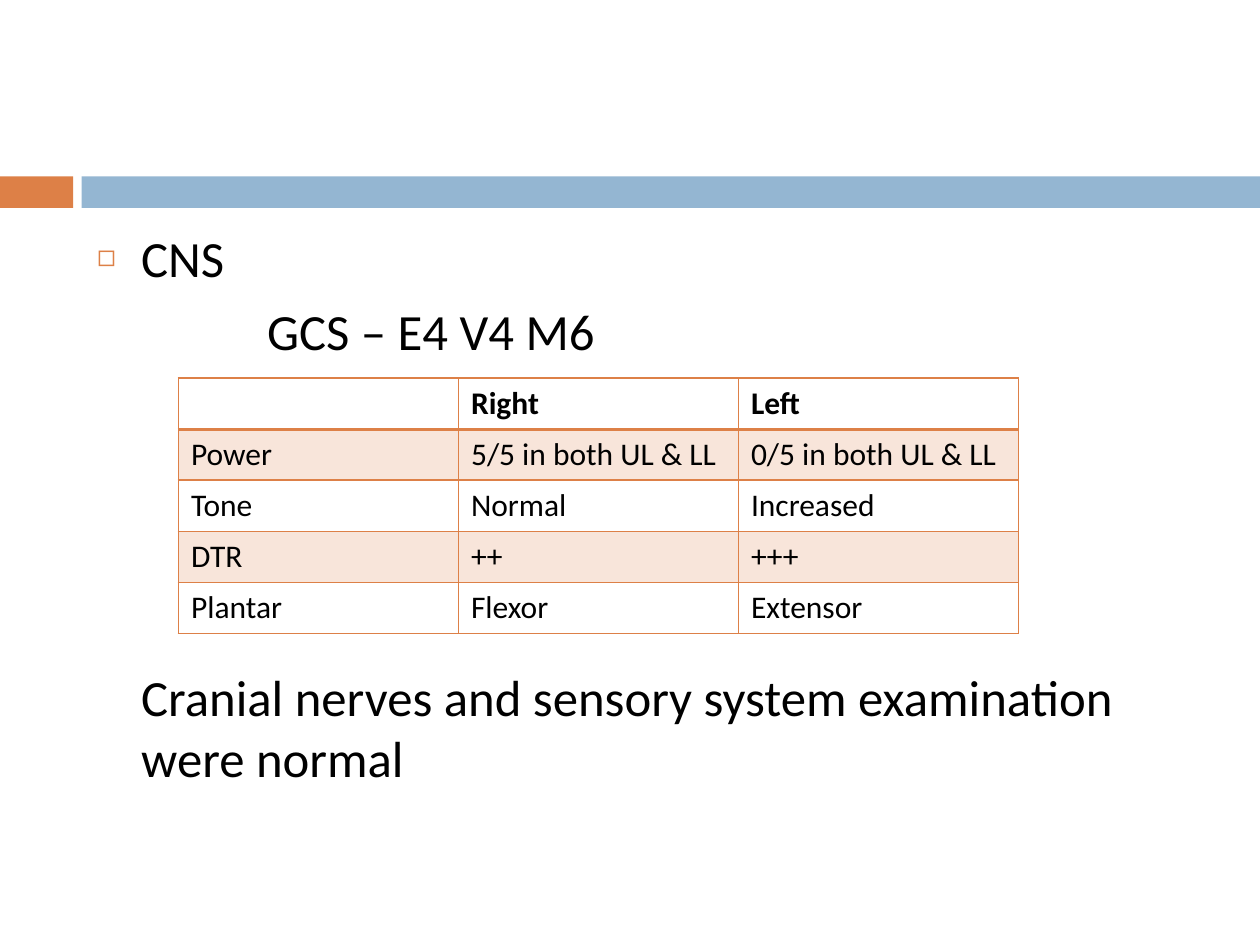
"""Build the nervous system examination slide."""

from dataclasses import dataclass

from lxml.etree import SubElement
from pptx import Presentation
from pptx.dml.color import RGBColor as Rgb
from pptx.enum.shapes import MSO_SHAPE as Shape
from pptx.enum.text import MSO_ANCHOR as Anchor, MSO_AUTO_SIZE as AutoSize
from pptx.oxml.ns import qn
from pptx.util import Pt

COLORS = {"accent": "DD8047", "band": "94B6D2", "text": "000000"}
FONT = "Calibri"
ROWS = [
    ["", "Right", "Left"],
    ["Power", "5/5 in both UL & LL", "0/5 in both UL & LL"],
    ["Tone", "Normal", "Increased"],
    ["DTR", "++", "+++"],
    ["Plantar", "Flexor", "Extensor"],
]


@dataclass
class Bar:
    left: float
    width: float
    color: str


@dataclass
class Line:
    text: str
    margin: float
    indent: float = 0
    before: float = 7
    bullet: str = ""


BARS = [Bar(0, 41.9, "accent"), Bar(46.6, 673.4, "band")]
LINES = [
    Line("CNS", 25.2, indent=-25.2, bullet="◻"),
    Line("GCS – E4 V4 M6", 97.2),
    Line("Cranial nerves and sensory system examination were normal", 25.2, before=174),
]


def add_bar(slide, bar: Bar) -> None:
    """Draw one solid part of the header band."""
    box = slide.shapes.add_shape(
        Shape.RECTANGLE, Pt(bar.left), Pt(100.8), Pt(bar.width), Pt(18)
    )
    box.shadow.inherit = False
    box.fill.solid()
    box.fill.fore_color.rgb = Rgb.from_string(COLORS[bar.color])
    box.line.fill.background()


def write_text(para, text: str, size: float, bold: bool = False) -> None:
    """Add a formatted span to a paragraph."""
    span = para.add_run()
    span.text = text
    for name, value in {"name": FONT, "size": Pt(size), "bold": bold}.items():
        setattr(span.font, name, value)
    span.font.color.rgb = Rgb.from_string(COLORS["text"])


def add_line(para, line: Line) -> None:
    """Write a body paragraph with its indent and bullet."""
    para.space_before = Pt(line.before)
    para.line_spacing = 1.0
    props = para._p.get_or_add_pPr()
    props.set("marL", str(Pt(line.margin)))
    props.set("indent", str(Pt(line.indent)))
    if line.bullet:
        color = SubElement(props, qn("a:buClr"))
        SubElement(color, qn("a:srgbClr"), val=COLORS["accent"])
        SubElement(props, qn("a:buSzPct"), val="60000")
        SubElement(props, qn("a:buChar"), char=line.bullet)
    else:
        SubElement(props, qn("a:buNone"))
    write_text(para, line.text, 29)


def add_body(box) -> None:
    """Place the body placeholder and fill in its lines."""
    place = {"left": 48.24, "top": 126, "width": 642.24, "height": 354.24}
    for name, value in place.items():
        setattr(box, name, Pt(value))
    frame = box.text_frame
    for name, value in {
        "word_wrap": True,
        "auto_size": AutoSize.NONE,
        "vertical_anchor": Anchor.TOP,
    }.items():
        setattr(frame, name, value)
    for index, line in enumerate(LINES):
        add_line(frame.add_paragraph() if index else frame.paragraphs[0], line)


def set_border(cell, side: str, width: float) -> None:
    """Draw one accent border of a table cell."""
    props = cell._tc.get_or_add_tcPr()
    border = SubElement(props, qn(f"a:ln{side}"), w=str(Pt(width)))
    fill = SubElement(border, qn("a:solidFill"))
    SubElement(fill, qn("a:srgbClr"), val=COLORS["accent"])


def fill_cell(cell, shaded: bool) -> None:
    """Tint a shaded cell and clear any other."""
    if not shaded:
        cell.fill.background()
        return
    cell.fill.solid()
    cell.fill.fore_color.rgb = Rgb.from_string(COLORS["accent"])
    color = cell._tc.tcPr.find(qn("a:solidFill")).find(qn("a:srgbClr"))
    SubElement(color, qn("a:alpha"), val="20000")


def add_findings(slide) -> None:
    """Add the table that compares both sides."""
    table = slide.shapes.add_table(
        len(ROWS), len(ROWS[0]), Pt(102), Pt(216), Pt(480), Pt(146)
    ).table
    for row, values in enumerate(ROWS):
        for column, text in enumerate(values):
            cell = table.cell(row, column)
            widths = {"L": 1, "R": 1, "T": 2 if row == 1 else 1, "B": 1 if row else 2}
            for side, width in widths.items():
                set_border(cell, side, width)
            fill_cell(cell, shaded=row % 2 == 1)
            if text:
                write_text(cell.text_frame.paragraphs[0], text, 18, bold=row == 0)


def main() -> None:
    """Assemble and save the deck."""
    deck = Presentation()
    deck.slide_width, deck.slide_height = Pt(720), Pt(540)
    page = deck.slides.add_slide(deck.slide_layouts.get_by_name("Title and Content"))
    title, body = page.placeholders
    title.element.getparent().remove(title.element)
    for bar in BARS:
        add_bar(page, bar)
    add_body(body)
    add_findings(page)
    deck.save("out.pptx")


if __name__ == "__main__":
    main()
